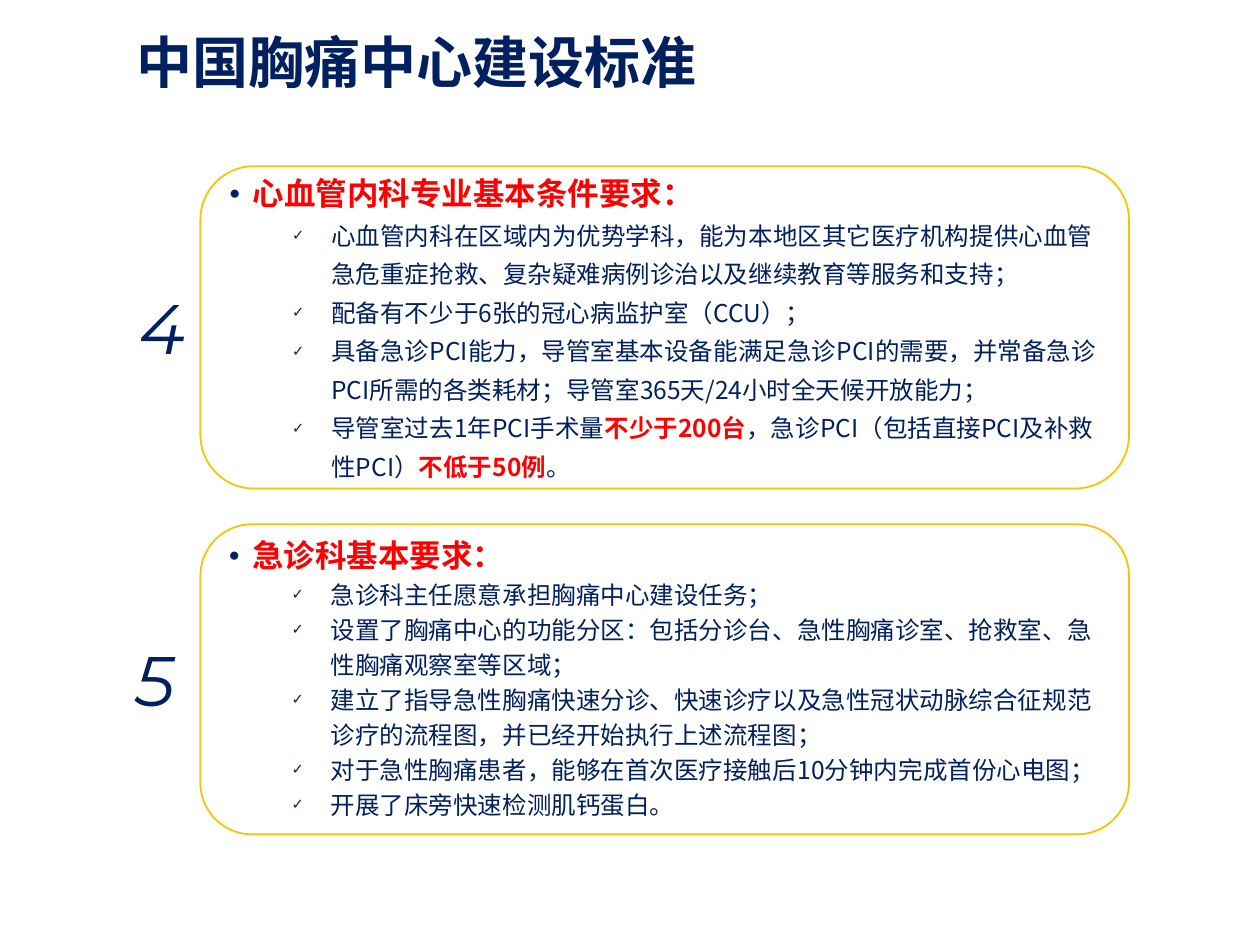
import pptx
import pptx.dml.color
import pptx.enum.shapes
import pptx.enum.text
import pptx.oxml
import pptx.oxml.ns
import pptx.util
from pptx.util import Cm, Pt

NAVY = pptx.dml.color.RGBColor(0x00, 0x20, 0x60)
RED = pptx.dml.color.RGBColor(0xFF, 0x00, 0x00)
GOLD = pptx.dml.color.RGBColor(0xFF, 0xC0, 0x00)
WHITE = pptx.dml.color.RGBColor(0xFF, 0xFF, 0xFF)
TEXT_FONT = "Noto Sans CJK SC"
NUMBER_FONT = "Montserrat"

CARD_LEFT, CARD_WIDTH = Cm(4.04), Cm(18.72)
CORNER_INSET = 0.05  # share of the card height taken by its rounded corners

# Within an item, every second piece is highlighted
SECTIONS = [
    {
        "number": "4", "top": Cm(3.35), "height": Cm(6.5), "line_spacing": Pt(22),
        "number_offset": (Cm(-1.47), Cm(2.26)),
        "heading": "心血管内科专业基本条件要求：",
        "items": [
            ["心血管内科在区域内为优势学科，能为本地区其它医疗机构提供心血管急危重症抢救、复杂疑难病例诊治以及继续教育等服务和支持；"],
            ["配备有不少于6张的冠心病监护室（CCU）；"],
            ["具备急诊PCI能力，导管室基本设备能满足急诊PCI的需要，并常备急诊PCI所需的各类耗材；导管室365天/24小时全天候开放能力；"],
            ["导管室过去1年PCI手术量", "不少于200台",
             "，急诊PCI（包括直接PCI及补救性PCI）", "不低于50例", "。"],
        ],
    },
    {
        "number": "5", "top": Cm(10.57), "height": Cm(6.25), "line_spacing": Pt(20),
        "number_offset": (Cm(-1.55), Cm(2.13)),
        "heading": "急诊科基本要求：",
        "items": [
            ["急诊科主任愿意承担胸痛中心建设任务；"],
            ["设置了胸痛中心的功能分区：包括分诊台、急性胸痛诊室、抢救室、急性胸痛观察室等区域；"],
            ["建立了指导急性胸痛快速分诊、快速诊疗以及急性冠状动脉综合征规范诊疗的流程图，并已经开始执行上述流程图；"],
            ["对于急性胸痛患者，能够在首次医疗接触后10分钟内完成首份心电图；"],
            ["开展了床旁快速检测肌钙蛋白。"],
        ],
    },
]


def place(shape, left, top, width, height):
    shape.left, shape.top, shape.width, shape.height = left, top, width, height


def format_run(run, size, color, bold=False, italic=False, name=TEXT_FONT):
    font = run.font
    font.name, font.size, font.bold, font.italic = name, size, bold, italic
    font.color.rgb = color
    east_asian = pptx.oxml.parse_xml(
        f'<a:ea {pptx.oxml.ns.nsdecls("a")} typeface="{name}"/>')
    run.font._element.find(pptx.oxml.ns.qn("a:latin")).addnext(east_asian)


def format_paragraph(paragraph, level, character, margin, hanging, line_spacing):
    paragraph.level = level
    properties = paragraph._p.get_or_add_pPr()
    properties.set("marL", str(margin))
    properties.set("indent", str(-hanging))
    namespace = pptx.oxml.ns.nsdecls("a")
    for bullet_part in (
        f'<a:buClr {namespace}><a:srgbClr val="{NAVY}"/></a:buClr>',
        f'<a:buSzPct {namespace} val="60000"/>',
        f'<a:buChar {namespace} char="{character}"/>',
    ):
        properties.append(pptx.oxml.parse_xml(bullet_part))
    paragraph.alignment = pptx.enum.text.PP_ALIGN.LEFT
    paragraph.line_spacing = line_spacing
    paragraph.space_before = Pt(0)
    paragraph.space_after = Pt(0)


def add_title(title, left, top, width, height):
    place(title, left, top, width, height)
    text_frame = title.text_frame
    text_frame.text = "中国胸痛中心建设标准"
    text_frame.auto_size = pptx.enum.text.MSO_AUTO_SIZE.NONE
    text_frame.vertical_anchor = pptx.enum.text.MSO_ANCHOR.TOP
    paragraph = text_frame.paragraphs[0]
    paragraph.alignment = pptx.enum.text.PP_ALIGN.LEFT
    paragraph.line_spacing = 0.9
    format_run(paragraph.runs[0], Pt(32), NAVY, bold=True)


def add_section(slide, body, section, left, top, width, height):
    # Rounded card behind the list
    card = slide.shapes.add_shape(
        pptx.enum.shapes.MSO_SHAPE.ROUNDED_RECTANGLE, left, top, width, height)
    card.shadow.inherit = False
    card.fill.solid()
    card.fill.fore_color.rgb = WHITE
    card.line.color.rgb = GOLD
    card.line.width = Pt(1)
    body._element.addprevious(card._element)

    # Heading and checklist, kept clear of the rounded corners
    inset = int(height * CORNER_INSET)
    place(body, left + inset, top + inset, width - 2 * inset, height - 2 * inset)
    text_frame = body.text_frame
    text_frame.auto_size = pptx.enum.text.MSO_AUTO_SIZE.NONE
    text_frame.vertical_anchor = pptx.enum.text.MSO_ANCHOR.MIDDLE
    text_frame.text = section["heading"]
    heading = text_frame.paragraphs[0]
    format_paragraph(heading, 0, "●", Cm(0.48), Cm(0.48), section["line_spacing"])
    format_run(heading.runs[0], Pt(18), RED, bold=True)
    for pieces in section["items"]:
        paragraph = text_frame.add_paragraph()
        format_paragraph(paragraph, 1, "✓", Cm(2.06), Cm(0.79), section["line_spacing"])
        for index, piece in enumerate(pieces):
            highlighted = index % 2 == 1
            run = paragraph.add_run()
            run.text = piece
            format_run(run, Pt(14), RED if highlighted else NAVY, bold=highlighted)

    # Section number beside the card
    offset_left, offset_top = section["number_offset"]
    number = slide.shapes.add_textbox(
        left + offset_left, top + offset_top, Cm(1), Cm(1.96))
    number.text_frame.word_wrap = True
    number.text_frame.text = section["number"]
    format_run(number.text_frame.paragraphs[0].runs[0], Pt(40), NAVY,
               italic=True, name=NUMBER_FONT)


def main():
    presentation = pptx.Presentation()
    presentation.slide_width, presentation.slide_height = Cm(25.4), Cm(19.05)
    two_content_layout = presentation.slide_layouts[3]
    slide = presentation.slides.add_slide(two_content_layout)
    add_title(slide.shapes.title, Cm(2.49), Cm(0.58), Cm(12.7), Cm(1.63))
    for index, section in enumerate(SECTIONS, start=1):
        add_section(slide, slide.placeholders[index], section,
                    CARD_LEFT, section["top"], CARD_WIDTH, section["height"])
    presentation.save("out.pptx")


if __name__ == "__main__":
    main()
